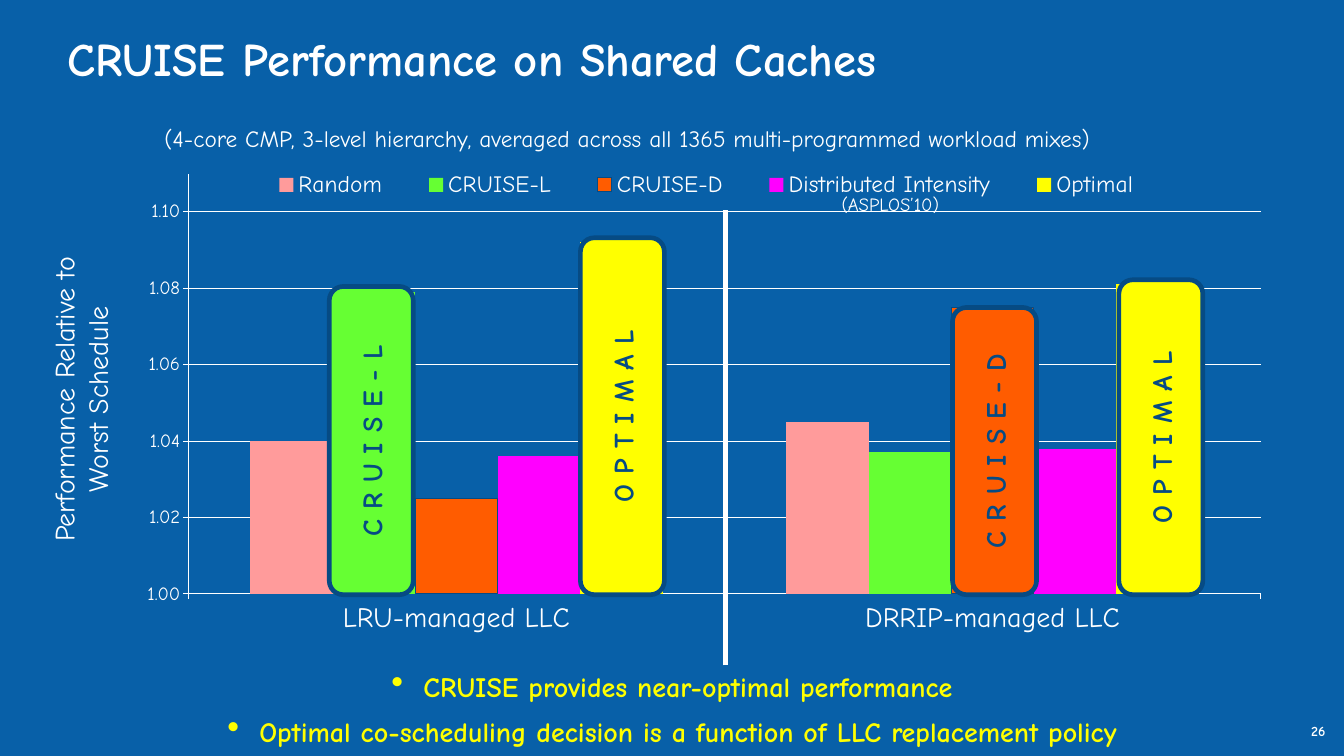
from lxml import etree
from pptx import Presentation
from pptx.chart.data import CategoryChartData
from pptx.dml.color import RGBColor
from pptx.enum.chart import XL_CHART_TYPE, XL_LEGEND_POSITION, XL_TICK_MARK
from pptx.enum.shapes import MSO_CONNECTOR, MSO_SHAPE
from pptx.enum.text import MSO_ANCHOR, PP_ALIGN
from pptx.oxml import parse_xml
from pptx.oxml.ns import nsdecls, qn
from pptx.util import Inches, Pt

CLUSTERED = XL_CHART_TYPE.COLUMN_CLUSTERED
LEGEND_RIGHT = XL_LEGEND_POSITION.RIGHT
TICK_OUT, TICK_NONE = XL_TICK_MARK.OUTSIDE, XL_TICK_MARK.NONE
STRAIGHT = MSO_CONNECTOR.STRAIGHT
ROUNDED, TEXT_TOP, TEXT_MIDDLE = MSO_SHAPE.ROUNDED_RECTANGLE, MSO_ANCHOR.TOP, MSO_ANCHOR.MIDDLE
LEFT, CENTER = PP_ALIGN.LEFT, PP_ALIGN.CENTER

COLUMNS, ROWS = 16, 9
TITLE = "CRUISE Performance on Shared Caches"
SETUP = "(4-core CMP, 3-level hierarchy, averaged across all 1365 multi-programmed workload mixes)"
CATEGORIES = ["LRU-managed LLC", "DRRIP-managed LLC"]
SERIES = {
    "Random": (1.04, 1.045),
    "CRUISE-L": (1.079, 1.037),
    "CRUISE-D": (1.025, 1.075),
    "Distributed Intensity": (1.036, 1.038),
    "Optimal": (1.092, 1.081),
}
PILLS = [
    ("C R U I S E - L", "CRUISE-L", 4.42, 3.67),
    ("C R U I S E - D", "CRUISE-D", 11.84, 3.42),
    ("O P T I M A L", "Optimal", 13.82, 3.75),
    ("O P T I M A L", "Optimal", 7.41, 4.25),
]
CONCLUSIONS = [
    "CRUISE provides near-optimal performance",
    "Optimal co-scheduling decision is a function of LLC replacement policy",
]
BASELINE, PILL_WIDTH = 7.08, 1
CHART_AREA = (0.8, 1.83, 14.41, 6.08)
PLOT_SHARES = (0.1, 0.039, 0.886, 0.823)
LEGEND_SHARES = (0.143, 0.03, 0.77, 0.062)


class Theme:
    font = "Comic Neue"
    background, white, yellow, navy = "0860A8", "FFFFFF", "FFFF00", "064B84"
    bars = {
        "Random": "FF9B9B",
        "CRUISE-L": "66FF33",
        "CRUISE-D": "FF5C00",
        "Distributed Intensity": "FF00FF",
        "Optimal": "FFFF00",
    }
    title, body, note, small, number = 40, 24, 20, 16, 12
    hairline, outline = 0.75, 4


def rgb(value):
    return RGBColor.from_string(value)


def style_font(font, size, color=Theme.white, bold=False):
    for name, value in {"name": Theme.font, "size": Pt(size), "bold": bold}.items():
        setattr(font, name, value)
    font.color.rgb = rgb(color)


def style_line(line, color, width):
    line.color.rgb = rgb(color)
    line.width = Pt(width)


def write(shape, texts, size, color=Theme.white, bold=False, align=LEFT,
          anchor=TEXT_TOP, inset=None, bullets=False):
    frame = shape.text_frame
    frame.word_wrap = True
    frame.vertical_anchor = anchor
    if inset is not None:
        for side in ("left", "top", "right", "bottom"):
            setattr(frame, f"margin_{side}", Inches(inset))
    for index, text in enumerate(texts):
        para = frame.add_paragraph() if index else frame.paragraphs[0]
        para.alignment = align
        if bullets:
            if index:
                para.space_before = Pt(size * 0.4)
            add_bullet(para)
        span = para.add_run()
        span.text = text
        style_font(span.font, size, color, bold)


def add_bullet(para):
    properties = para._p.get_or_add_pPr()
    properties.set("marL", str(Inches(0.38)))
    properties.set("indent", str(-Inches(0.38)))
    etree.SubElement(properties, qn("a:buSzPct")).set("val", "125000")
    etree.SubElement(properties, qn("a:buChar")).set("char", "•")


def add_text(page, area, texts, size, rotation=0, **style):
    box = page.shapes.add_textbox(*map(Inches, area))
    box.rotation = rotation
    write(box, texts, size, **style)


def add_pill(page, label, series, center, height):
    left = center - height / 2
    top = BASELINE - height / 2 - PILL_WIDTH / 2
    pill = page.shapes.add_shape(ROUNDED, *map(Inches, (left, top, height, PILL_WIDTH)))
    pill.rotation = 270
    pill.shadow.inherit = False
    pill.fill.solid()
    pill.fill.fore_color.rgb = rgb(Theme.bars[series])
    style_line(pill.line, Theme.navy, Theme.outline)
    write(pill, [label], Theme.body, Theme.navy, True, CENTER, TEXT_MIDDLE)


def manual_layout(shares, inner=False):
    target = '<c:layoutTarget val="inner"/>' if inner else ""
    modes = "".join(f'<c:{side}Mode val="edge"/>' for side in "xy")
    sizes = "".join(f'<c:{side} val="{share}"/>' for side, share in zip("xywh", shares))
    return parse_xml(f'<c:layout {nsdecls("c")}><c:manualLayout>{target}{modes}{sizes}'
                     "</c:manualLayout></c:layout>")


def add_performance_chart(page):
    data = CategoryChartData(number_format="0.000")
    data.categories = CATEGORIES
    for name, values in SERIES.items():
        data.add_series(name, values)
    chart = page.shapes.add_chart(CLUSTERED, *map(Inches, CHART_AREA), data).chart
    chart.has_title = False
    style_font(chart.font, Theme.number)

    plot = chart.plots[0]
    for name, value in {"gap_width": 150, "overlap": 0, "vary_by_categories": False}.items():
        setattr(plot, name, value)
    for series in plot.series:
        series.format.fill.solid()
        series.format.fill.fore_color.rgb = rgb(Theme.bars[series.name])
        if series.name == "CRUISE-D":
            style_line(series.format.line, Theme.navy, Theme.hairline)

    scale = chart.value_axis
    for name, value in {"minimum_scale": 1, "maximum_scale": 1.11, "major_unit": 0.02,
                        "has_major_gridlines": True}.items():
        setattr(scale, name, value)
    scale.tick_labels.number_format = "#,##0.00"
    scale.tick_labels.number_format_is_linked = False
    style_line(scale.major_gridlines.format.line, Theme.white, Theme.hairline)
    for axis, size in ((scale, Theme.small), (chart.category_axis, Theme.body)):
        axis.major_tick_mark, axis.minor_tick_mark = TICK_OUT, TICK_NONE
        style_font(axis.tick_labels.font, size)
        style_line(axis.format.line, Theme.white, Theme.hairline)

    chart.has_legend = True
    chart.legend.position = LEGEND_RIGHT
    chart.legend.include_in_layout = False
    style_font(chart.legend.font, Theme.note)
    plot_area = chart.element.xpath(".//c:plotArea")[0]
    for layout in plot_area.findall(qn("c:layout")):
        plot_area.remove(layout)
    plot_area.insert(0, manual_layout(PLOT_SHARES, True))
    legend = chart.element.xpath(".//c:legend")[0]
    for layout in legend.findall(qn("c:layout")):
        legend.remove(layout)
    legend.find(qn("c:legendPos")).addnext(manual_layout(LEGEND_SHARES))


def add_divider(page):
    ends = map(Inches, (8.64, 7.92, 8.64, 2.5))
    divider = page.shapes.add_connector(STRAIGHT, *ends)
    style_line(divider.line, Theme.white, Theme.outline)
    etree.SubElement(divider._element.spPr, qn("a:effectLst"))


def main():
    deck = Presentation()
    deck.slide_width, deck.slide_height = Inches(COLUMNS), Inches(ROWS)
    page = deck.slides.add_slide(deck.slide_layouts[5])
    page.background.fill.solid()
    page.background.fill.fore_color.rgb = rgb(Theme.background)

    title = page.shapes.title
    for side, value in zip(("left", "top", "width", "height"), (0.8, 0.36, 14.41, 1.17)):
        setattr(title, side, Inches(value))
    write(title, [TITLE], Theme.title, bold=True, inset=0)
    add_text(page, (15.61, 8.6, 0.39, 0.4), ["26"], Theme.number, bold=True, inset=0)
    add_performance_chart(page)
    add_text(page, (1.86, 1.43, 12.28, 0.44), [SETUP], Theme.note)
    add_divider(page)
    add_text(page, (-1.04, 4.3, 4, 0.91), ["Performance Relative to", "Worst Schedule"],
             Theme.body, rotation=270, align=CENTER)
    add_text(page, (0, 7.92, COLUMNS, 1.07), CONCLUSIONS, Theme.body,
             color=Theme.yellow, bold=True, align=CENTER, bullets=True)
    for pill in PILLS:
        add_pill(page, *pill)
    add_text(page, (9.92, 2.25, 1.54, 0.37), ["(ASPLOS’10)"], Theme.small)
    deck.save("out.pptx")


if __name__ == "__main__":
    main()
